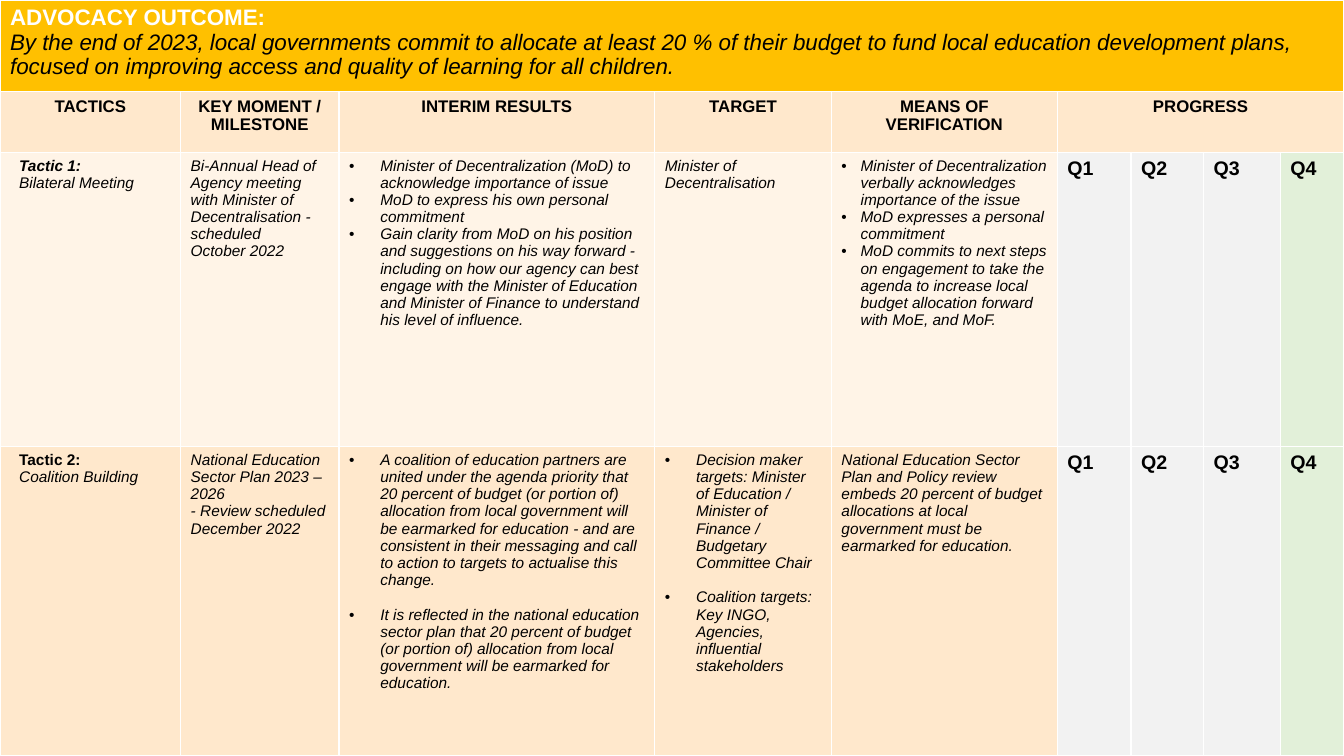
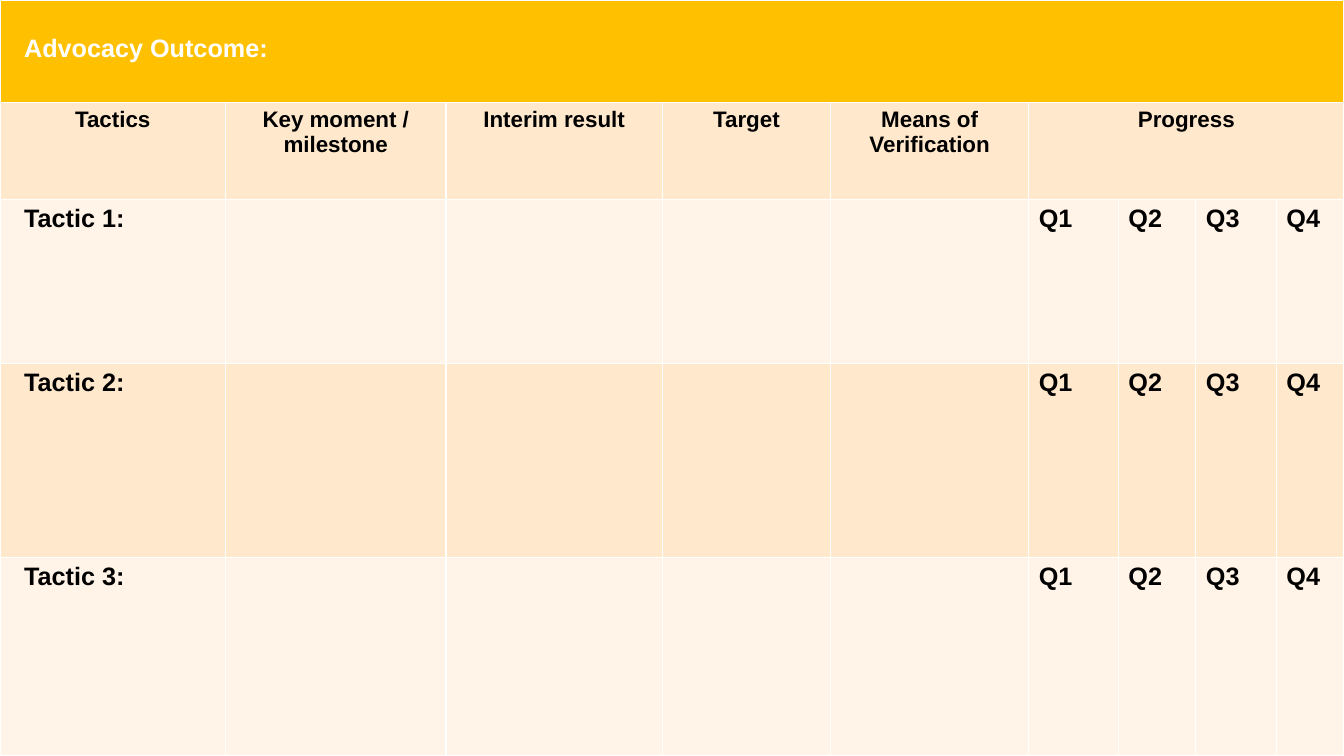
from dataclasses import dataclass

from lxml.etree import SubElement
from pptx import Presentation
from pptx.dml.color import RGBColor
from pptx.enum.text import PP_ALIGN
from pptx.oxml.ns import qn
from pptx.util import Inches, Pt


@dataclass(frozen=True)
class Theme:
    font: str = "Arial"
    white: str = "FFFFFF"
    black: str = "000000"
    gold: str = "FFC000"
    peach: str = "FFE8CC"
    cream: str = "FFF4E7"
    grey: str = "F2F2F2"
    green: str = "E2F0D9"
    border: float = 1
    body: float = 11
    heading: float = 12
    quarter: float = 14
    banner: float = 16
    large: float = 18


THEME = Theme()
QUARTERS = ("Q1", "Q2", "Q3", "Q4")
PROGRESS_COLUMN = 5
FIRST_TACTIC_ROW = 2


@dataclass(frozen=True)
class Box:
    left: float
    top: float
    width: float
    height: float


def add_bullet(para, indent):
    properties = para._p.get_or_add_pPr()
    properties.set("marL", str(Inches(indent)))
    properties.set("indent", str(-Inches(indent)))
    SubElement(properties, qn("a:buFont"), typeface=THEME.font)
    SubElement(properties, qn("a:buChar"), char="•")


def write(cell, *texts, size=THEME.body, color=THEME.black, bold=False,
          italic=False, align=PP_ALIGN.LEFT, bullet=None, gap=0):
    """Append one paragraph per text; bullet is its hanging indent in inches."""
    frame = cell.text_frame
    for text in texts:
        first = not frame.text
        para = frame.paragraphs[0] if first else frame.add_paragraph()
        para.alignment = align
        if bullet:
            add_bullet(para, bullet)
        if gap and not first:
            para.space_before = Pt(gap)
        span = para.add_run()
        span.text = text
        span.font.name = THEME.font
        span.font.size = Pt(size)
        span.font.bold = bold
        span.font.italic = italic
        span.font.color.rgb = RGBColor.from_string(color)


def paint(cell, color):
    """Give a cell its white borders and its fill."""
    properties = cell._tc.get_or_add_tcPr()
    for side in ("lnL", "lnR", "lnT", "lnB"):
        line = SubElement(properties, qn(f"a:{side}"), w=str(Pt(THEME.border)))
        fill = SubElement(line, qn("a:solidFill"))
        SubElement(fill, qn("a:srgbClr"), val=THEME.white)
    cell.fill.solid()
    cell.fill.fore_color.rgb = RGBColor.from_string(color)


def add_plan_table(page, box, columns, rows, headings, heading_size,
                   quarter_size, quarter_fills=None):
    """Add the banded grid with its headings and quarters; columns and rows are shares of the box."""
    table = page.shapes.add_table(
        len(rows), len(columns), Inches(box.left), Inches(box.top),
        Inches(box.width), Inches(box.height)).table
    for column, share in zip(table.columns, columns):
        column.width = Inches(box.width * share / sum(columns))
    for row, share in zip(table.rows, rows):
        row.height = Inches(box.height * share / sum(rows))

    bands = (THEME.cream, THEME.peach)
    for r in range(len(rows)):
        for c in range(len(columns)):
            fill = THEME.gold if r == 0 else bands[r % 2]
            if quarter_fills and r >= FIRST_TACTIC_ROW and c >= PROGRESS_COLUMN:
                fill = quarter_fills[c - PROGRESS_COLUMN]
            paint(table.cell(r, c), fill)

    last = len(columns) - 1
    table.cell(0, 0).merge(table.cell(0, last))
    table.cell(1, PROGRESS_COLUMN).merge(table.cell(1, last))
    for c, heading in enumerate(headings):
        write(table.cell(1, c), heading, size=heading_size, bold=True,
              align=PP_ALIGN.CENTER)
    for r in range(FIRST_TACTIC_ROW, len(rows)):
        for c, quarter in enumerate(QUARTERS, PROGRESS_COLUMN):
            write(table.cell(r, c), quarter, size=quarter_size, bold=True)
    return table


def write_tactic(cell, label, name=None, size=THEME.body, italic=False, margin=0.19):
    cell.margin_left = Inches(margin)
    write(cell, label, size=size, bold=True, italic=italic)
    if name:
        write(cell, name, size=size, italic=True)


def fill_bilateral_row(table, row):
    tactic, moment, results, target, means = (
        table.cell(row, c) for c in range(PROGRESS_COLUMN))
    write_tactic(tactic, "Tactic 1:", "Bilateral Meeting", italic=True)
    write(moment,
          "Bi-Annual Head of Agency meeting with Minister of Decentralisation - scheduled",
          "October 2022", italic=True)
    write(results,
          "Minister of Decentralization (MoD) to acknowledge importance of issue",
          "MoD to express his own personal commitment",
          "Gain clarity from MoD on his position and suggestions on his way forward - "
          "including on how our agency can best engage with the Minister of Education "
          "and Minister of Finance to understand his level of influence.",
          italic=True, bullet=0.31)
    write(target, "Minister of Decentralisation", italic=True)
    write(means,
          "Minister of Decentralization verbally acknowledges importance of the issue",
          "MoD expresses a personal commitment",
          "MoD commits to next steps on engagement to take the agenda to increase "
          "local budget allocation forward with MoE, and MoF.",
          italic=True, bullet=0.19)


def fill_coalition_row(table, row):
    tactic, moment, results, target, means = (
        table.cell(row, c) for c in range(PROGRESS_COLUMN))
    write_tactic(tactic, "Tactic 2:", "Coalition Building")
    write(moment, "National Education Sector Plan 2023 – 2026",
          "- Review scheduled December 2022", italic=True)
    write(results,
          "A coalition of education partners are united under the agenda priority that "
          "20 percent of budget (or portion of) allocation from local government will be "
          "earmarked for education - and are consistent in their messaging and call to "
          "action to targets to actualise this change.",
          "It is reflected in the national education sector plan that 20 percent of "
          "budget (or portion of) allocation from local government will be earmarked "
          "for education.",
          italic=True, bullet=0.31, gap=12.5)
    write(target,
          "Decision maker targets: Minister of Education / Minister of Finance / "
          "Budgetary Committee Chair",
          "Coalition targets: Key INGO, Agencies, influential stakeholders",
          italic=True, bullet=0.31, gap=12.5)
    write(means,
          "National Education Sector Plan and Policy review embeds 20 percent of budget "
          "allocations at local government must be earmarked for education.",
          italic=True)


def build_example_plan(page, box):
    table = add_plan_table(
        page, box,
        columns=(1.79, 1.57, 3.13, 1.75, 2.24, 0.73, 0.72, 0.76, 0.63),
        rows=(0.91, 0.6, 2.92, 3.07),
        headings=("TACTICS", "KEY MOMENT / MILESTONE", "INTERIM RESULTS", "TARGET",
                  "MEANS OF VERIFICATION", "PROGRESS"),
        heading_size=THEME.heading, quarter_size=THEME.quarter,
        quarter_fills=(THEME.grey, THEME.grey, THEME.grey, THEME.green))
    banner = table.cell(0, 0)
    write(banner, "ADVOCACY OUTCOME:", size=THEME.banner, color=THEME.white, bold=True)
    write(banner,
          "By the end of 2023, local governments commit to allocate at least 20 % of "
          "their budget to fund local education development plans, focused on improving "
          "access and quality of learning for all children.",
          size=THEME.banner, italic=True)
    fill_bilateral_row(table, FIRST_TACTIC_ROW)
    fill_coalition_row(table, FIRST_TACTIC_ROW + 1)


def build_blank_plan(page, box):
    table = add_plan_table(
        page, box,
        columns=(2.24, 2.19, 2.15, 1.67, 1.97, 0.89, 0.77, 0.8, 0.67),
        rows=(1.02, 0.96, 1.63, 1.93, 1.97),
        headings=("Tactics", "Key moment / milestone", "Interim result", "Target",
                  "Means of Verification", "Progress"),
        heading_size=THEME.banner, quarter_size=THEME.large)
    banner = table.cell(0, 0)
    banner.margin_left = Inches(0.24)
    banner.margin_top = Inches(0.34)
    write(banner, "Advocacy Outcome:", size=THEME.large, color=THEME.white, bold=True)
    for number in (1, 2, 3):
        write_tactic(table.cell(FIRST_TACTIC_ROW + number - 1, 0), f"Tactic {number}:",
                     size=THEME.large, margin=0.24)


def main():
    deck = Presentation()
    deck.slide_width = Inches(13.33)
    deck.slide_height = Inches(7.5)
    blank_layout = deck.slide_layouts[6]
    for build in (build_example_plan, build_blank_plan):
        build(deck.slides.add_slide(blank_layout), Box(0, 0, 13.33, 7.5))
    deck.save("out.pptx")


if __name__ == "__main__":
    main()
